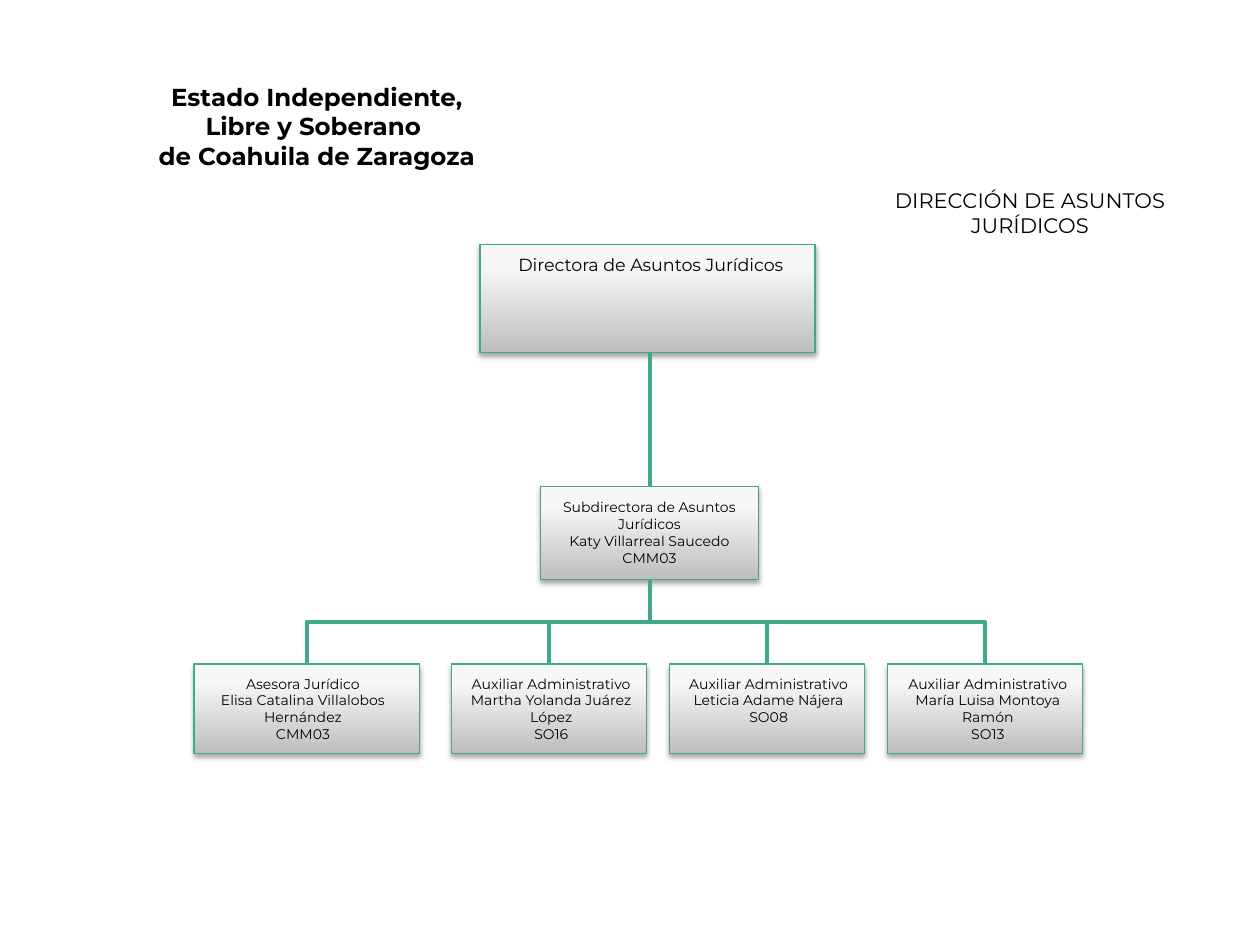
from copy import deepcopy

from lxml import etree
from pptx import Presentation
from pptx import util as u
from pptx.dml.color import RGBColor
from pptx.enum import shapes, text
from pptx.oxml import parse_xml
from pptx.oxml.ns import nsdecls, qn

# Content: text boxes are (left, top, width, height) in points
GREEN = "40AA87"
STOPS = [(0, "BEBEBE"), (0.8, "F7F7F7"), (1, "F8F8F8")]
TITLE = ["Estado Independiente, Libre y Soberano ", "de Coahuila de Zaragoza"]
AREA = ["DIRECCIÓN DE ASUNTOS JURÍDICOS"]
DIRECTOR = ["Directora de Asuntos Jurídicos"]
DEPUTY = ["Subdirectora de Asuntos Jurídicos", "Katy Villarreal Saucedo", "CMM03"]
ADVISER = ["Asesora Jurídico", "Elisa Catalina Villalobos Hernández", "CMM03"]
# Each assistant: lines, text left, text width
ASSISTANTS = [
    (["Auxiliar Administrativo", "Martha Yolanda Juárez López", "SO16"], 256.3, 117.4),
    (["Auxiliar Administrativo", "Leticia Adame Nájera", "SO08"], 383.8, 110.9),
    (["Auxiliar Administrativo", "María Luisa Montoya Ramón", "SO13"], 507.6, 113.8),
]
STAFF_TOP, STAFF_HEIGHT, STAFF_TEXT_TOP = 379.4, 51.1, 382.3
ASSISTANT_LEFT, ASSISTANT_WIDTH, ASSISTANT_PITCH = 257.8, 111.6, 124.6

deck = Presentation()
deck.slide_width, deck.slide_height = u.Pt(720), u.Pt(540)
page = deck.slides.add_slide(deck.slide_layouts[6])


def color(value):
    return RGBColor.from_string(value)


def add_text(lines, place, size=8, bold=False):
    box = page.shapes.add_textbox(*map(u.Pt, place))
    frame = box.text_frame
    frame.word_wrap = True
    frame.auto_size = text.MSO_AUTO_SIZE.SHAPE_TO_FIT_TEXT
    for i, line in enumerate(lines):
        para = frame.add_paragraph() if i else frame.paragraphs[0]
        para.alignment = text.PP_ALIGN.CENTER
        span = para.add_run()
        span.text = line
        span.font.name, span.font.size, span.font.bold = "Montserrat", u.Pt(size), bold
        span.font.color.rgb = color("000000")


def add_box(*place):
    box = page.shapes.add_shape(shapes.MSO_SHAPE.RECTANGLE, *map(u.Pt, place))
    box.line.color.rgb, box.line.width = color(GREEN), u.Pt(0.75)
    # Gradient from dark bottom to light top, with a third stop added
    box.fill.gradient()
    box.fill.gradient_angle = 90
    stops = box._element.spPr.find(".//" + qn("a:gsLst"))
    stops.append(deepcopy(stops[-1]))
    for stop, (position, value) in zip(box.fill.gradient_stops, STOPS):
        stop.position, stop.color.rgb = position, color(value)
    # Soft shadow below
    box.shadow.inherit = False
    box._element.spPr.find(qn("a:effectLst")).append(parse_xml(
        f'<a:outerShdw {nsdecls("a")} blurRad="{u.Pt(3.1)}" dist="{u.Pt(1.8)}" '
        'dir="5400000" rotWithShape="0"><a:srgbClr val="000000">'
        '<a:alpha val="35000"/></a:srgbClr></a:outerShdw>'))
    return box


def add_line(kind, *ends):
    line = page.shapes.add_connector(kind, *map(u.Pt, ends))
    line.line.color.rgb, line.line.width = color(GREEN), u.Pt(2.25)
    etree.SubElement(line._element.spPr, qn("a:effectLst"))
    return line


def add_branch(x1, y1, x2, y2):
    """Elbow that leaves downwards: a sideways elbow turned a quarter."""
    middle_x, middle_y = (x1 + x2) / 2, (y1 + y2) / 2
    half_width, half_height = (y2 - y1) / 2, abs(x2 - x1) / 2
    side = 1 if x2 > x1 else -1
    line = add_line(shapes.MSO_CONNECTOR.ELBOW,
                    middle_x + side * half_width, middle_y - half_height,
                    middle_x - side * half_width, middle_y + half_height)
    line._element.spPr.xfrm.set("rot", "16200000" if side > 0 else "5400000")


# Boxes
add_box(274.3, 139.7, 191.5, 61.9)
deputy = add_box(308.9, 277.9, 124.6, 53.3)
staff = [add_box(110.9, STAFF_TOP, 128.9, STAFF_HEIGHT)]
for i in range(len(ASSISTANTS)):
    staff.append(add_box(ASSISTANT_LEFT + i * ASSISTANT_PITCH, STAFF_TOP,
                         ASSISTANT_WIDTH, STAFF_HEIGHT))

# Texts
add_text(TITLE, (70.6, 43.2, 221, 74.9), size=14, bold=True)
add_text(AREA, (472.3, 103.7, 232.6, 21.6), size=12)
add_text(DIRECTOR, (282.2, 141.8, 179.3, 31.7), size=10)
add_text(DEPUTY, (303.1, 281.5, 136.1, 67.7))
add_text(ADVISER, (108.7, STAFF_TEXT_TOP, 128.9, 56.9))
for lines, left, width in ASSISTANTS:
    add_text(lines, (left, STAFF_TEXT_TOP, width, 56.9))

# Lines: trunk, then one branch to each member of staff
trunk_x = (deputy.left + deputy.width / 2) / u.Pt(1)
deputy_bottom = (deputy.top + deputy.height) / u.Pt(1)
trunk = add_line(shapes.MSO_CONNECTOR.STRAIGHT, trunk_x, 201.6, trunk_x, 277.9)
trunk.end_connect(deputy, 0)
for box in staff:
    add_branch(trunk_x, deputy_bottom, (box.left + box.width / 2) / u.Pt(1), STAFF_TOP)

deck.save("out.pptx")
